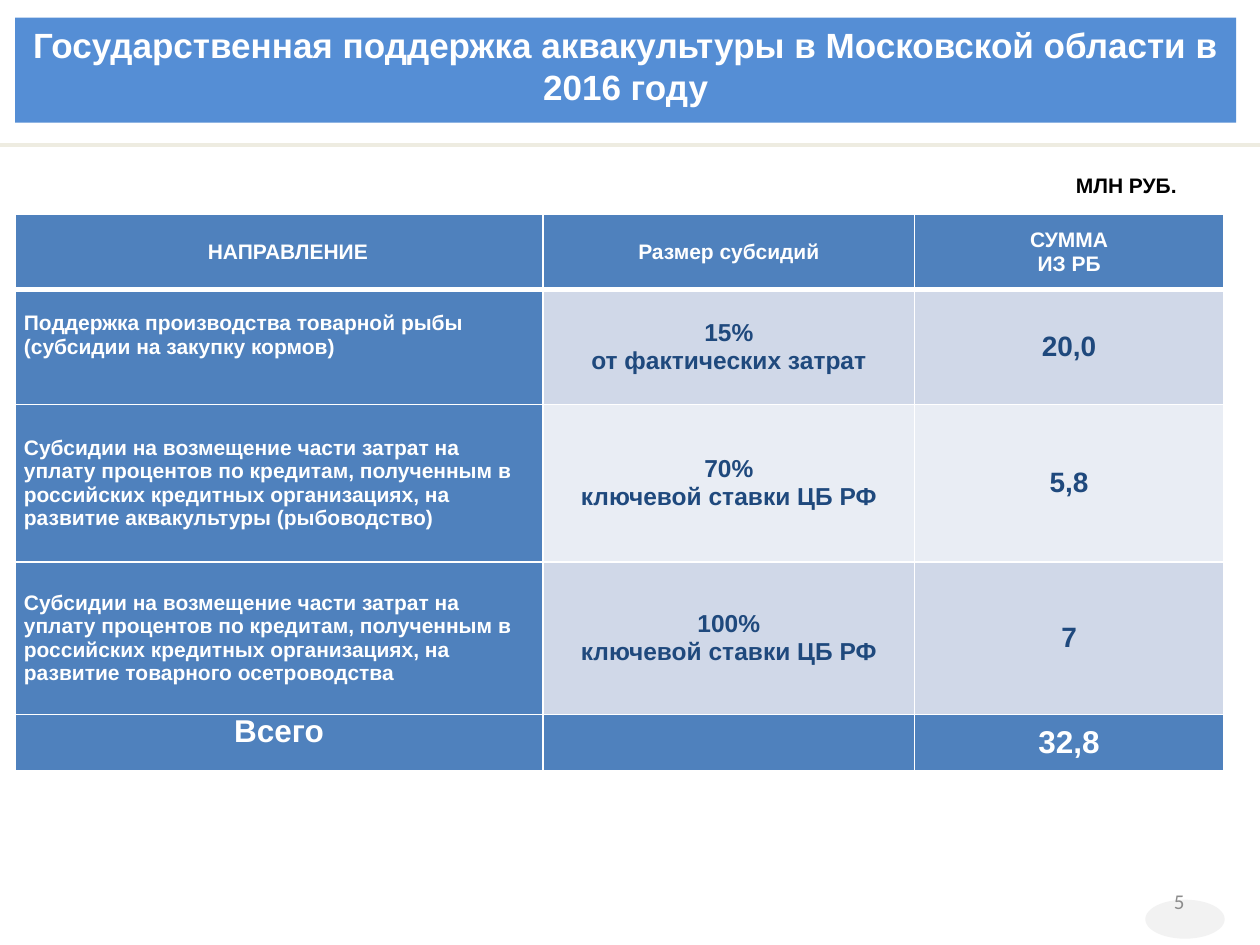
"""Build the slide on state support for aquaculture in Moscow Region."""
from lxml import etree
from pptx import Presentation
from pptx.dml.color import RGBColor
from pptx.enum.shapes import MSO_CONNECTOR, MSO_SHAPE
from pptx.enum.text import MSO_ANCHOR, MSO_AUTO_SIZE, PP_ALIGN
from pptx.oxml.ns import qn
from pptx.util import Inches, Pt

LEFT, CENTER, RIGHT = PP_ALIGN.LEFT, PP_ALIGN.CENTER, PP_ALIGN.RIGHT
TOP, MIDDLE = MSO_ANCHOR.TOP, MSO_ANCHOR.MIDDLE
TITLE_ONLY = 5

THEME = {
    "font": "Arial", "number_font": "Calibri",
    "banner": "558ED5", "rule": "EEECE1", "head": "4F81BD",
    "bands": ("D0D8E8", "E9EDF4"), "value": "1F497D",
    "white": "FFFFFF", "black": "000000", "badge": "F2F2F2", "number": "8C8C8C",
    "title_size": 20, "text_size": 12, "rate_size": 14, "sum_size": 16, "total_size": 18,
}

TITLE = "Государственная поддержка аквакультуры в Московской области в 2016 году"
UNIT = "МЛН РУБ."
PAGE_NUMBER = "5"
CREDIT = ("Субсидии на возмещение части затрат на уплату процентов по кредитам, "
          "полученным в российских кредитных организациях, на развитие ")
ROWS = [
    ("НАПРАВЛЕНИЕ", "Размер субсидий", "СУММА\nИЗ РБ"),
    ("Поддержка производства товарной рыбы (субсидии на закупку кормов)",
     "15%\nот фактических затрат", "20,0"),
    (CREDIT + "аквакультуры (рыбоводство)", "70%\nключевой ставки ЦБ РФ", "5,8"),
    (CREDIT + "товарного осетроводства", "100%\nключевой ставки ЦБ РФ", "7"),
    ("Всего", "", "32,8"),
]
COLUMN_WIDTHS = (4.19, 2.95, 2.45)
ROW_HEIGHTS = (0.6, 0.91, 1.25, 1.21, 0.45)
LAST = len(ROWS) - 1


def box_of(left, top, width, height):
    return [Inches(value) for value in (left, top, width, height)]


def paint(target, color):
    target.fill.solid()
    target.fill.fore_color.rgb = RGBColor.from_string(color)


def write(frame, text, size, color, align, bold=True, font=THEME["font"]):
    frame.text = text
    for para in frame.paragraphs:
        para.alignment = align
        para.font.size = Pt(size)
        for span in para.runs:
            span.font.name = font
            span.font.size = Pt(size)
            span.font.bold = bold
            span.font.color.rgb = RGBColor.from_string(color)


def add_borders(cell, widths):
    properties = cell._tc.get_or_add_tcPr()
    for side, width in widths.items():
        line = etree.SubElement(properties, qn(f"a:ln{side}"), w=str(Pt(width)))
        fill = etree.SubElement(line, qn("a:solidFill"))
        etree.SubElement(fill, qn("a:srgbClr"), val=THEME["white"])


def cell_style(row, column):
    """Return fill, text colour, size and alignment of a table cell."""
    if row == 0:
        return THEME["head"], THEME["white"], THEME["text_size"], CENTER
    if row == LAST:
        return THEME["head"], THEME["white"], THEME["total_size"], CENTER
    if column == 0:
        return THEME["head"], THEME["white"], THEME["text_size"], LEFT
    size = THEME["rate_size"] if column == 1 else THEME["sum_size"]
    return THEME["bands"][(row - 1) % 2], THEME["value"], size, CENTER


def add_banner(page):
    title = page.shapes.title
    title.left, title.top, title.width, title.height = box_of(0.12, 0.14, 9.69, 0.77)
    paint(title, THEME["banner"])
    write(title.text_frame, TITLE, THEME["title_size"], THEME["white"], CENTER)
    title.text_frame.vertical_anchor = TOP
    title.text_frame.auto_size = MSO_AUTO_SIZE.SHAPE_TO_FIT_TEXT
    rule = page.shapes.add_connector(MSO_CONNECTOR.STRAIGHT, *box_of(0, 1.15, 10, 1.15))
    rule.line.color.rgb = RGBColor.from_string(THEME["rule"])
    rule.line.width = Pt(2.25)
    etree.SubElement(rule._element.spPr, qn("a:effectLst"))


def add_subsidies(page):
    area = box_of(0.12, 1.7, sum(COLUMN_WIDTHS), sum(ROW_HEIGHTS))
    table = page.shapes.add_table(len(ROWS), len(COLUMN_WIDTHS), *area).table
    for column, width in zip(table.columns, COLUMN_WIDTHS):
        column.width = Inches(width)
    for row, height in zip(table.rows, ROW_HEIGHTS):
        row.height = Inches(height)
    for r, texts in enumerate(ROWS):
        margin = Inches(0.05 if r in (0, LAST) else 0.07)
        for c, text in enumerate(texts):
            cell = table.cell(r, c)
            fill, color, size, align = cell_style(r, c)
            write(cell.text_frame, text, size, color, align)
            cell.margin_left = cell.margin_right = margin
            cell.margin_top = cell.margin_bottom = 0
            cell.vertical_anchor = MIDDLE
            add_borders(cell, {"L": 1, "R": 1, "T": 3 if r == 1 else 1, "B": 3 if r == 0 else 1})
            paint(cell, fill)
    table.cell(0, 0).margin_left = Inches(0.19)
    table.cell(1, 0).margin_bottom = Inches(0.19)
    table.cell(LAST, 0).vertical_anchor = TOP


def add_labels(page):
    badge = page.shapes.add_shape(MSO_SHAPE.OVAL, *box_of(9.09, 7.14, 0.63, 0.31))
    badge.shadow.inherit = False
    paint(badge, THEME["badge"])
    badge.line.fill.background()
    unit = page.shapes.add_textbox(*box_of(8.44, 1.32, 1.01, 0.3)).text_frame
    write(unit, UNIT, THEME["text_size"], THEME["black"], LEFT)
    unit.word_wrap = False
    unit.auto_size = MSO_AUTO_SIZE.SHAPE_TO_FIT_TEXT
    number = page.shapes.add_textbox(*box_of(7.17, 6.95, 2.33, 0.4)).text_frame
    write(number, PAGE_NUMBER, THEME["text_size"], THEME["number"], RIGHT,
          bold=False, font=THEME["number_font"])
    number.word_wrap = True
    number.vertical_anchor = MIDDLE


def main():
    deck = Presentation()
    deck.slide_width, deck.slide_height = Inches(10), Inches(7.5)
    page = deck.slides.add_slide(deck.slide_layouts[TITLE_ONLY])
    add_banner(page)
    add_subsidies(page)
    add_labels(page)
    deck.save("out.pptx")


if __name__ == "__main__":
    main()
